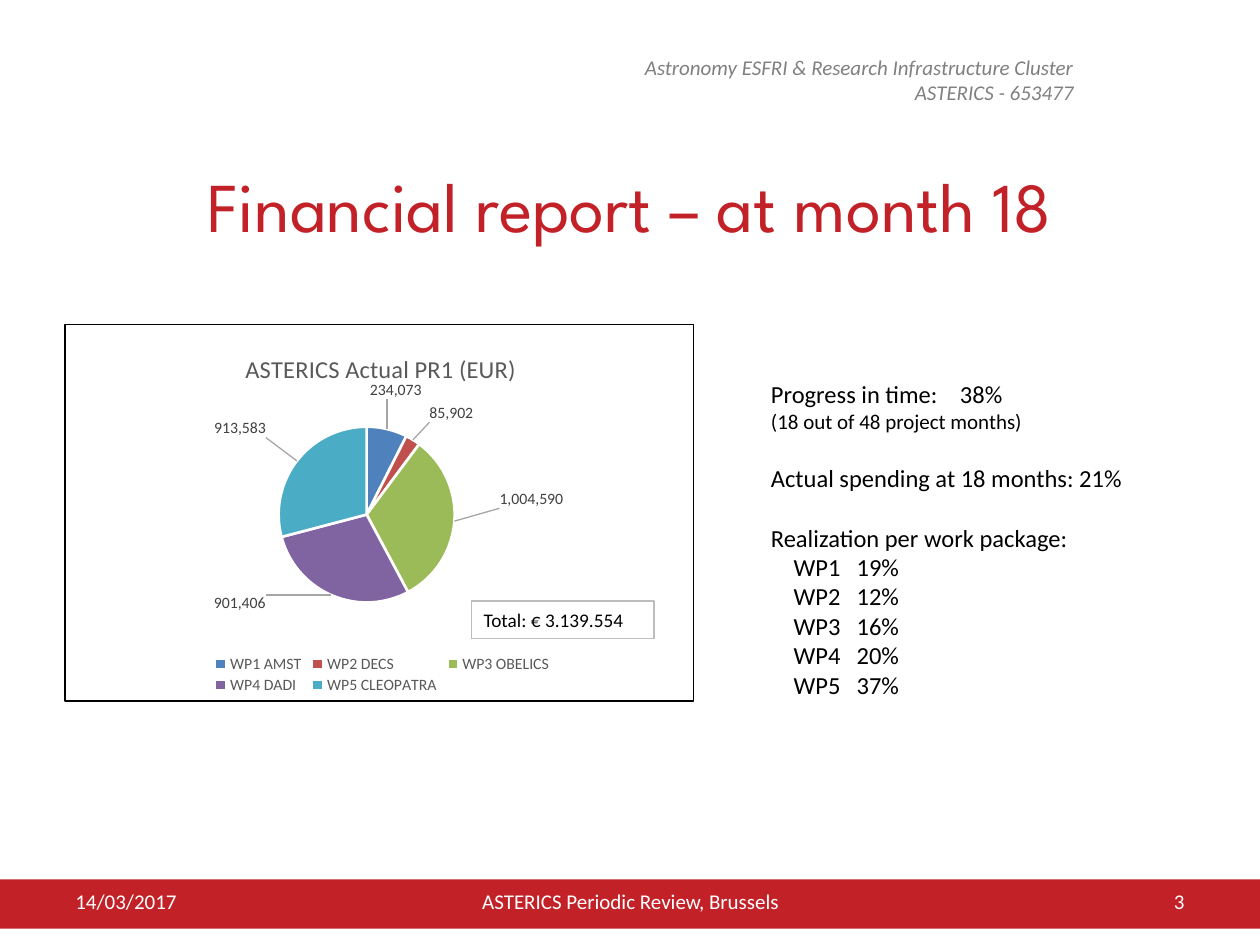
from dataclasses import dataclass
from pptx import Presentation
from pptx.chart.data import CategoryChartData as ChartData
from pptx.dml.color import RGBColor as RGB
from pptx.enum.chart import XL_CHART_TYPE as Kind, XL_LABEL_POSITION as Spot, XL_LEGEND_POSITION as Side
from pptx.enum.shapes import MSO_SHAPE as Shape
from pptx.enum.text import MSO_ANCHOR as Anchor, PP_ALIGN as Align
from pptx.oxml import parse_xml
from pptx.oxml.ns import nsdecls, qn
from pptx.util import Inches, Pt


@dataclass(frozen=True)
class Theme:
    """Colours, fonts and type sizes."""
    red: str = "C32128"
    white: str = "FFFFFF"
    black: str = "000000"
    grey: str = "808080"
    soft: str = "595959"
    dark: str = "404040"
    pale: str = "BDBDBD"
    lead: str = "A6A6A6"
    body: str = "Calibri"
    head: str = "League Spartan"
    title: int = 40
    large: int = 14
    base: int = 12
    total: int = 11
    chart: int = 10
    small: int = 9


T = Theme()
PACKS = [
    ("WP1 AMST", 234073, "4F81BD", (-0.03, -0.06)),
    ("WP2 DECS", 85902, "C0504D", (0.02, -0.03)),
    ("WP3 OBELICS", 1004590, "9BBB59", (0.06, -0.06)),
    ("WP4 DADI", 901406, "8064A2", (-0.1, -0.02)),
    ("WP5 CLEOPATRA", 913583, "4BACC6", (-0.04, -0.05)),
]
RATES = [("WP1", "19%"), ("WP2", "12%"), ("WP3", "16%"), ("WP4", "20%"), ("WP5", "37%")]


def box(at):
    """Turn inches into lengths."""
    return [Inches(n) for n in at]


def style(font, size, color, **more):
    """Format a font."""
    for key, val in {"name": T.body, "size": Pt(size), **more}.items():
        setattr(font, key, val)
    font.color.rgb = RGB.from_string(color)


def paint(fill, color):
    """Give a solid fill."""
    fill.solid()
    fill.fore_color.rgb = RGB.from_string(color)


def edge(line, color, width):
    """Give a solid line."""
    line.color.rgb = RGB.from_string(color)
    line.width = Pt(width)


def write(frame, lines, size, color, align=Align.LEFT, anchor=Anchor.TOP, **more):
    """Fill a text frame with lines of one style."""
    frame.word_wrap = True
    frame.vertical_anchor = anchor
    frame.text = "\n".join(lines)
    for para in frame.paragraphs:
        para.alignment = align
        style(para.font, size, color, **more)


def label(slide, at, lines, size, color, **more):
    """Add a text box."""
    frame = slide.shapes.add_textbox(*box(at)).text_frame
    write(frame, lines, size, color, **more)


def block(slide, at, fill, line=None):
    """Add a plain rectangle."""
    shape = slide.shapes.add_shape(Shape.RECTANGLE, *box(at))
    shape.shadow.inherit = False
    paint(shape.fill, fill)
    if line:
        edge(shape.line, line, 0.75)
    else:
        shape.line.fill.background()
    return shape


def heading(slide, text):
    """Set the slide title."""
    title = slide.shapes.title
    for key, val in zip(("left", "top", "width", "height"), box((0.5, 1.15, 9, 0.94))):
        setattr(title, key, val)
    write(title.text_frame, [text], T.title, T.red, Align.CENTER, Anchor.MIDDLE, name=T.head)


def place(node, index, **vals):
    """Set a manual layout on a chart element."""
    for old in node.findall(qn("c:layout")):
        node.remove(old)
    items = "".join(f'<c:{key} val="{val}"/>' for key, val in vals.items())
    node.insert(index, parse_xml(
        f'<c:layout {nsdecls("c")}><c:manualLayout>{items}</c:manualLayout></c:layout>'))


def border(color):
    """Make a chart line format."""
    return parse_xml(f'<c:spPr {nsdecls("c", "a")}><a:ln w="9525"><a:solidFill>'
                     f'<a:srgbClr val="{color}"/></a:solidFill></a:ln></c:spPr>')


def tags(series):
    """Place the value labels with leader lines."""
    for i in range(len(PACKS)):
        tag = series.points[i].data_label
        style(tag.font, T.small, T.dark)
        tag.position = Spot.OUTSIDE_END
    marks = series.data_labels
    style(marks.font, T.small, T.dark)
    for key, val in {"show_value": True, "number_format": "#,##0",
                     "number_format_is_linked": False}.items():
        setattr(marks, key, val)
    root = marks._element
    for node, pack in zip(root.findall(qn("c:dLbl")), PACKS):
        x, y = pack[3]
        place(node, 1, x=x, y=y)
    for old in root.findall(qn("c:showLeaderLines")):
        root.remove(old)
    root.append(parse_xml(f'<c:showLeaderLines {nsdecls("c")} val="1"/>'))
    lead = parse_xml(f'<c:leaderLines {nsdecls("c")}/>')
    lead.append(border(T.lead))
    root.append(lead)


def pie(slide, at):
    """Add the spending pie chart."""
    data = ChartData(number_format="#,##0")
    data.categories = [pack[0] for pack in PACKS]
    data.add_series("Series 1", [pack[1] for pack in PACKS])
    chart = slide.shapes.add_chart(Kind.PIE, *box(at), data).chart
    style(chart.font, T.chart, T.black)
    chart.has_title = True
    frame = chart.chart_title.text_frame
    frame.text = "ASTERICS Actual PR1 (EUR)"
    style(frame.paragraphs[0].runs[0].font, T.large, T.soft, bold=False)
    chart.has_legend = True
    legend = chart.legend
    legend.position = Side.BOTTOM
    legend.include_in_layout = False
    style(legend.font, T.small, T.soft)
    plot = chart.plots[0]
    plot.vary_by_categories = True
    series = plot.series[0]
    for i, pack in enumerate(PACKS):
        form = series.points[i].format
        paint(form.fill, pack[2])
        edge(form.line, T.white, 1.5)
    tags(series)
    body = chart._chartSpace.find(qn("c:chart"))
    modes = {"xMode": "edge", "yMode": "edge"}
    place(body.find(qn("c:title")), 1, **modes, x=0.28, y=0.06)
    place(body.find(qn("c:legend")), 1, **modes, x=0.23, y=0.87, w=0.55, h=0.12)
    place(body.find(qn("c:plotArea")), 0, layoutTarget="inner", **modes, x=0.34, y=0.27, w=0.28, h=0.47)
    body.addnext(border(T.black))


def stops(para, pos, left=0):
    """Set an indent and one tab stop."""
    props = para._p.get_or_add_pPr()
    props.set("marL", str(Inches(left)))
    props.set("indent", "0")
    props.append(parse_xml(f'<a:tabLst {nsdecls("a")}><a:tab pos="{Inches(pos)}" algn="l"/></a:tabLst>'))


def notes(slide, at):
    """Add the progress figures."""
    frame = slide.shapes.add_textbox(*box(at)).text_frame
    frame.word_wrap = True
    lines = ["Progress in time:\t38%", "(18 out of 48 project months)",
             "Actual spending at 18 months: 21%", "Realization per work package:"]
    frame.text = "\n".join(lines + ["\t".join(rate) for rate in RATES])
    for i, para in enumerate(frame.paragraphs):
        if i == 0:
            stops(para, 1.5)
        elif i >= len(lines):
            stops(para, 0.68, 0.18)
        if i in (2, 3):
            para.space_before = Pt(17)
        style(para.font, T.base if i == 1 else T.large, T.black)


def main():
    """Build the slide."""
    deck = Presentation()
    deck.slide_width, deck.slide_height = Inches(10), Inches(7.5)
    slide = deck.slides.add_slide(deck.slide_layouts[5])
    block(slide, (0, 6.98, 10, 0.39), T.red)
    label(slide, (4.37, 0.38, 4.25, 0.5),
          ["Astronomy ESFRI & Research Infrastructure Cluster", "ASTERICS - 653477"],
          T.base, T.grey, align=Align.RIGHT, italic=True)
    heading(slide, "Financial report – at month 18")
    for left, width, text, align in [(0.5, 2.33, "14/03/2017", Align.LEFT),
                                     (3.42, 3.17, "ASTERICS Periodic Review, Brussels", Align.CENTER),
                                     (7.17, 2.33, "3", Align.RIGHT)]:
        label(slide, (left, 6.95, width, 0.4), [text], T.base, T.white, align=align, anchor=Anchor.MIDDLE)
    pie(slide, (0.51, 2.57, 5, 3))
    total = block(slide, (3.74, 4.77, 1.45, 0.3), T.white, T.pale)
    write(total.text_frame, ["Total: € 3.139.554"], T.total, T.black, anchor=Anchor.MIDDLE)
    notes(slide, (6.02, 2.96, 3.31, 2.96))
    deck.save("out.pptx")


if __name__ == "__main__":
    main()
